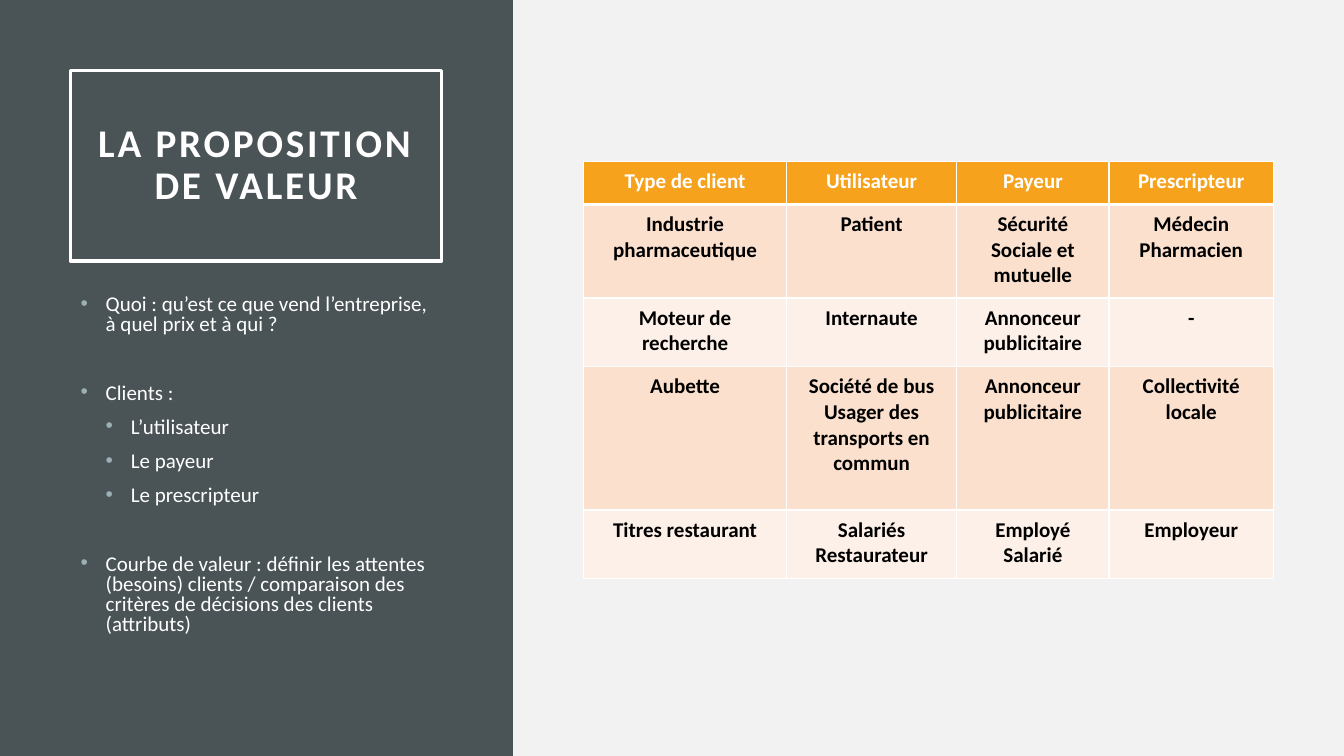
from lxml.etree import SubElement
from pptx import Presentation
from pptx.dml.color import RGBColor
from pptx.enum.shapes import MSO_SHAPE
from pptx.enum.text import MSO_ANCHOR, PP_ALIGN
from pptx.oxml.ns import qn
from pptx.util import Cm, Pt

COLORS = {
    "background": "F2F2F2", "panel": "4A5356", "white": "FFFFFF",
    "black": "000000", "bullet": "9BAFB5", "header": "F6A21D",
    "odd row": "FBE0CD", "even row": "FDF0E8",
}

# Text, level and space before of each bullet
BULLETS = [
    ("Quoi : qu’est ce que vend l’entreprise, à quel prix et à qui ?", 0, 0),
    ("Clients :", 0, 34.5),
    ("L’utilisateur", 1, 10),
    ("Le payeur", 1, 10),
    ("Le prescripteur", 1, 10),
    ("Courbe de valeur : définir les attentes (besoins) clients / comparaison "
     "des critères de décisions des clients (attributs)", 0, 34.5),
]

CLIENT_ROWS = [
    ["Type de client", "Utilisateur", "Payeur", "Prescripteur"],
    ["Industrie pharmaceutique", "Patient", "Sécurité Sociale et mutuelle",
     "Médecin\nPharmacien"],
    ["Moteur de recherche", "Internaute", "Annonceur publicitaire", "-"],
    ["Aubette", "Société de bus\nUsager des transports en commun",
     "Annonceur publicitaire", "Collectivité locale"],
    ["Titres restaurant", "Salariés\nRestaurateur", "Employé\nSalarié", "Employeur"],
]
COLUMN_WIDTHS = [5.11, 4.29, 3.84, 4.14]
ROW_HEIGHTS = [1.09, 2.36, 1.73, 3.61, 1.73]


def color(name):
    return RGBColor.from_string(COLORS[name])


def apply(target, values):
    for name, value in values.items():
        setattr(target, name, value)


def margins(horizontal, vertical):
    return {"margin_left": Cm(horizontal), "margin_right": Cm(horizontal),
            "margin_top": Cm(vertical), "margin_bottom": Cm(vertical)}


class SlideBuilder:
    font_name = "Calibri"

    def __init__(self, slide):
        self.slide = slide
        slide.background.fill.solid()
        slide.background.fill.fore_color.rgb = color("background")

    def style_font(self, paragraph, size, color_name, bold=False):
        apply(paragraph.font, {"name": self.font_name, "size": Pt(size), "bold": bold})
        paragraph.font.color.rgb = color(color_name)

    def rectangle(self, box, fill=None, line=None):
        shape = self.slide.shapes.add_shape(MSO_SHAPE.RECTANGLE, *map(Cm, box))
        shape.shadow.inherit = False
        if fill:
            shape.fill.solid()
            shape.fill.fore_color.rgb = color(fill)
        else:
            shape.fill.background()
        if line:
            shape.line.color.rgb = color(line)
            shape.line.width = Pt(2.5)
        else:
            shape.line.fill.background()
        return shape

    def title(self, box, text):
        frame = self.rectangle(box, line="white").text_frame
        apply(frame, {"word_wrap": True, "vertical_anchor": MSO_ANCHOR.MIDDLE,
                      **margins(0.51, 0.51)})
        paragraph = frame.paragraphs[0]
        apply(paragraph, {"alignment": PP_ALIGN.CENTER, "line_spacing": 0.9})
        run = paragraph.add_run()
        run.text = text
        self.style_font(run, 28, "white", bold=True)
        run.font._element.set("spc", "200")

    def bullet_list(self, box, items):
        frame = self.slide.shapes.add_textbox(*map(Cm, box)).text_frame
        frame.word_wrap = True
        for index, (text, level, space) in enumerate(items):
            paragraph = frame.add_paragraph() if index else frame.paragraphs[0]
            apply(paragraph, {"text": text, "level": level, "line_spacing": 0.8,
                              "space_before": Pt(space)})
            properties = paragraph._p.get_or_add_pPr()
            properties.set("marL", str(Cm(0.635 * (level + 1))))
            properties.set("indent", str(Cm(-0.635)))
            bullet_color = SubElement(properties, qn("a:buClr"))
            SubElement(bullet_color, qn("a:srgbClr"), val=COLORS["bullet"])
            SubElement(properties, qn("a:buFont"), typeface="Arial")
            SubElement(properties, qn("a:buChar"), char="•")
            self.style_font(paragraph, 15, "white")

    def borders(self, cell, widths):
        properties = cell._tc.get_or_add_tcPr()
        for side, width in widths.items():
            line = SubElement(properties, qn(f"a:ln{side}"), w=str(Pt(width)))
            fill = SubElement(line, qn("a:solidFill"))
            SubElement(fill, qn("a:srgbClr"), val=COLORS["white"])

    def cell(self, cell, text, fill, text_color, widths):
        self.borders(cell, widths)
        cell.fill.solid()
        cell.fill.fore_color.rgb = color(fill)
        apply(cell, margins(0.36, 0.18))
        cell.text = text
        for paragraph in cell.text_frame.paragraphs:
            paragraph.alignment = PP_ALIGN.CENTER
            self.style_font(paragraph, 15, text_color, bold=True)

    def table(self, left, top, rows, column_widths, row_heights):
        table = self.slide.shapes.add_table(
            len(rows), len(column_widths), Cm(left), Cm(top),
            Cm(sum(column_widths)), Cm(sum(row_heights))).table
        for column, width in zip(table.columns, column_widths):
            column.width = Cm(width)
        for row, height in zip(table.rows, row_heights):
            row.height = Cm(height)
        for row_index, texts in enumerate(rows):
            if row_index == 0:
                fill, text_color = "header", "white"
            else:
                fill, text_color = ("odd row" if row_index % 2 else "even row"), "black"
            widths = {"L": 1, "R": 1, "T": 3 if row_index == 1 else 1,
                      "B": 1 if row_index else 3}
            for column_index, text in enumerate(texts):
                self.cell(table.cell(row_index, column_index), text, fill,
                          text_color, widths)


def main():
    presentation = Presentation()
    apply(presentation, {"slide_width": Cm(33.87), "slide_height": Cm(19.05)})
    builder = SlideBuilder(presentation.slides.add_slide(presentation.slide_layouts[6]))

    # Left panel with title and bullets
    builder.rectangle((0, 0, 12.93, 19.05), fill="panel")
    builder.title((1.78, 1.78, 9.35, 4.8), "LA PROPOSITION DE VALEUR")
    builder.bullet_list((1.78, 7.32, 9.35, 9.5), BULLETS)

    # Client table
    builder.table(14.71, 4.06, CLIENT_ROWS, COLUMN_WIDTHS, ROW_HEIGHTS)

    presentation.save("out.pptx")


if __name__ == "__main__":
    main()
